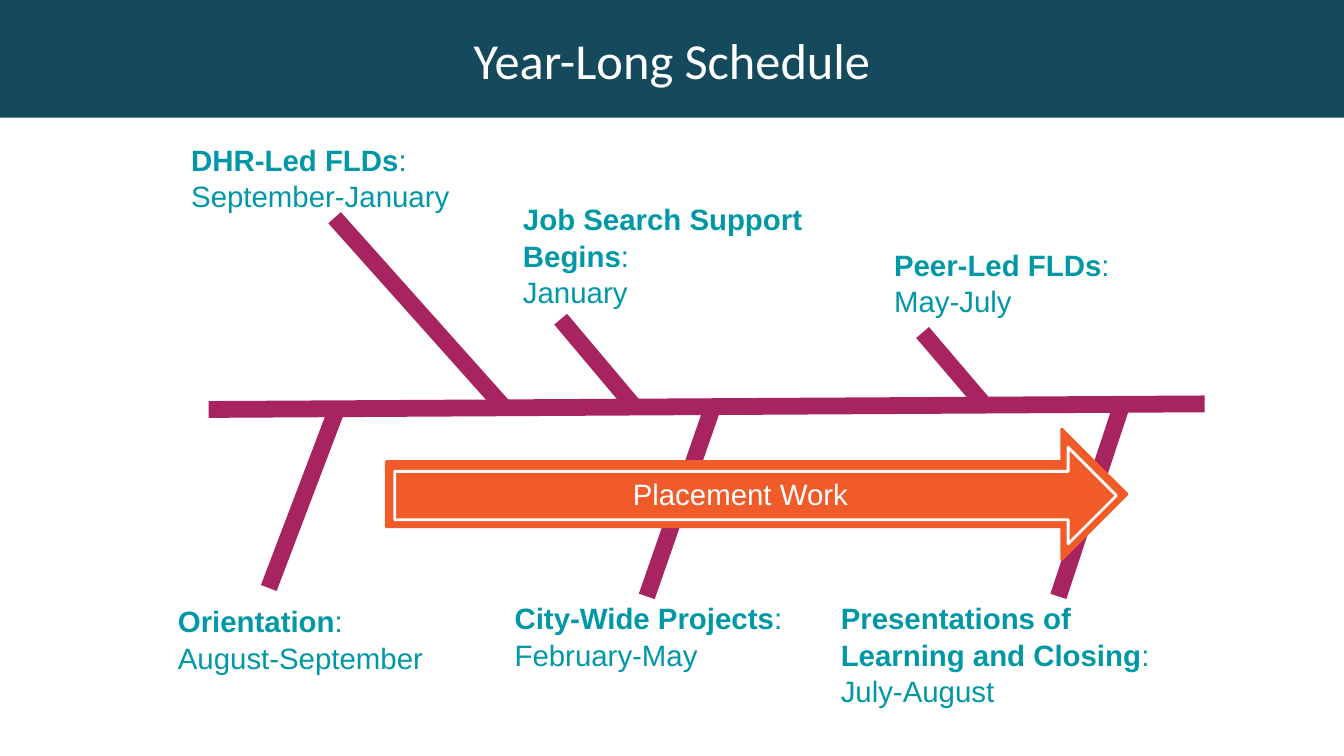
from dataclasses import dataclass

from lxml.etree import SubElement
from pptx import Presentation
from pptx.dml.color import RGBColor
from pptx.enum.shapes import MSO_CONNECTOR, MSO_SHAPE
from pptx.enum.text import MSO_ANCHOR, PP_ALIGN
from pptx.oxml.ns import qn
from pptx.util import Pt


@dataclass(frozen=True)
class Theme:
    banner: str = "144A5C"
    timeline: str = "A82461"
    label: str = "0097A7"
    arrow: str = "F15B2A"
    light: str = "FFFFFF"
    heading_font: str = "Calibri"
    body_font: str = "Arial"
    heading_size: float = 36
    body_size: float = 21
    body_spacing: float = 1.04
    timeline_width: float = 12
    outline_width: float = 2
    inset: float = 7.2


class Schedule:
    def __init__(self, deck, theme):
        self.theme = theme
        self.page = deck.slides.add_slide(deck.slide_layouts[6])

    def apply(self, target, values):
        for name, value in values.items():
            setattr(target, name, value)

    def add_span(self, para, text, color, size=None, font=None, bold=False):
        span = para.add_run()
        span.text = text
        self.apply(span.font, {
            "name": font or self.theme.body_font,
            "size": Pt(size or self.theme.body_size),
            "bold": bold,
        })
        span.font.color.rgb = RGBColor.from_string(color)

    def text_box(self, left, top, width, height, anchor=MSO_ANCHOR.TOP):
        box = self.page.shapes.add_textbox(Pt(left), Pt(top), Pt(width), Pt(height))
        frame = box.text_frame
        margins = dict.fromkeys(
            ("margin_left", "margin_top", "margin_right", "margin_bottom"),
            Pt(self.theme.inset))
        self.apply(frame, {"word_wrap": True, "vertical_anchor": anchor, **margins})
        return frame

    def shape(self, kind, left, top, width, height, fill=None, line=None):
        shape = self.page.shapes.add_shape(kind, Pt(left), Pt(top), Pt(width), Pt(height))
        shape.shadow.inherit = False
        if fill:
            shape.fill.solid()
            shape.fill.fore_color.rgb = RGBColor.from_string(fill)
        else:
            shape.fill.background()
        if line:
            shape.line.color.rgb = RGBColor.from_string(line)
            shape.line.width = Pt(self.theme.outline_width)
        else:
            shape.line.fill.background()
        return shape

    def title(self, text):
        self.shape(MSO_SHAPE.RECTANGLE, 0, 0, 960, 84, fill=self.theme.banner)
        para = self.text_box(144, 11, 672, 62.5, MSO_ANCHOR.MIDDLE).paragraphs[0]
        para.alignment = PP_ALIGN.CENTER
        self.add_span(para, text, self.theme.light, self.theme.heading_size,
                      self.theme.heading_font)

    def bone(self, start, end):
        line = self.page.shapes.add_connector(
            MSO_CONNECTOR.STRAIGHT, *(Pt(value) for value in (*start, *end)))
        line.line.color.rgb = RGBColor.from_string(self.theme.timeline)
        line.line.width = Pt(self.theme.timeline_width)
        SubElement(line.element.spPr, qn("a:effectLst"))

    def milestone(self, name, months, left, top, width):
        frame = self.text_box(left, top, width, 90.5)
        heading, period = frame.paragraphs[0], frame.add_paragraph()
        self.add_span(heading, name, self.theme.label, bold=True)
        self.add_span(heading, ":", self.theme.label)
        self.add_span(period, months, self.theme.label)
        for para in frame.paragraphs:
            para.line_spacing = self.theme.body_spacing

    def work_arrow(self, text):
        theme = self.theme
        arrow = self.shape(MSO_SHAPE.RIGHT_ARROW, 276, 306.5, 529, 93, theme.arrow, theme.arrow)
        arrow.text_frame.vertical_anchor = MSO_ANCHOR.MIDDLE
        para = arrow.text_frame.paragraphs[0]
        para.alignment = PP_ALIGN.CENTER
        self.add_span(para, text, theme.light)
        self.shape(MSO_SHAPE.RIGHT_ARROW, 282, 319.5, 515.5, 69, line=theme.light)


MILESTONES = [
    ("Orientation", "August-September", (120, 422.5, 201), (240.5, 292.5), (192, 420)),
    ("DHR-Led FLDs", "September-January", (129.5, 93, 201), (360.5, 291.5), (239, 155.5)),
    ("Job Search Support Begins", "January", (366.5, 135.5, 227.5), (453.5, 291), (400.5, 228)),
    ("City-Wide Projects", "February-May", (360.5, 420.5, 216.5), (508.5, 292.5), (462, 426)),
    ("Peer-Led FLDs", "May-July", (631.5, 168, 201), (702.5, 288.5), (659, 237.5)),
    ("Presentations of Learning and Closing", "July-August", (593.5, 420.5, 249),
     (801.5, 288.5), (756, 426)),
]


def main():
    deck = Presentation()
    deck.slide_width, deck.slide_height = Pt(960), Pt(540)
    schedule = Schedule(deck, Theme())
    schedule.title("Year-Long Schedule")
    schedule.bone((149, 292.5), (860.5, 288.5))
    for name, months, place, joint, tip in MILESTONES:
        schedule.bone(joint, tip)
        schedule.milestone(name, months, *place)
    schedule.work_arrow("Placement Work")
    deck.save("out.pptx")


if __name__ == "__main__":
    main()
